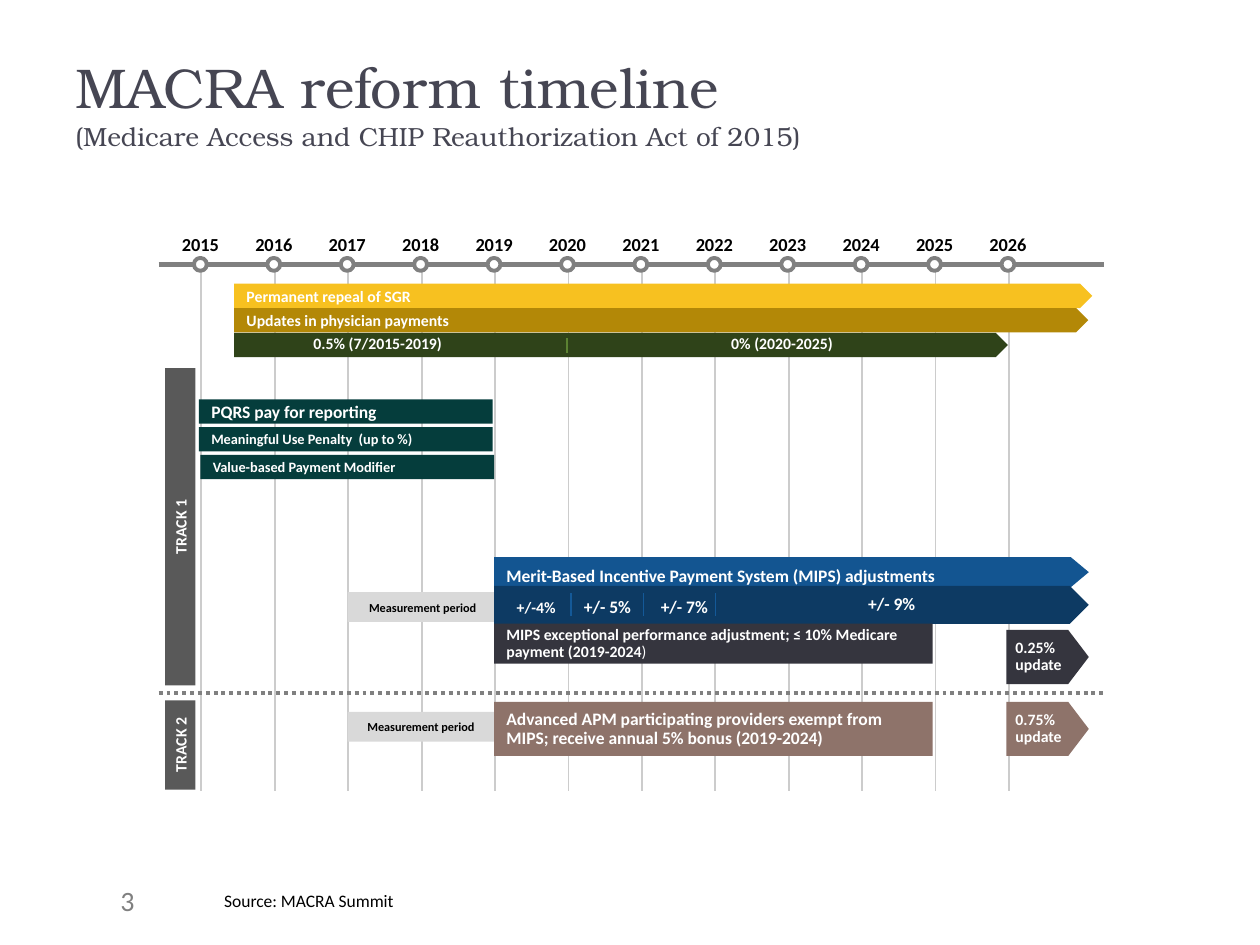
from pptx import Presentation
from pptx.dml.color import RGBColor
from pptx.enum.dml import MSO_LINE_DASH_STYLE as Dash
from pptx.enum.shapes import MSO_CONNECTOR as Connector, MSO_SHAPE as Shape
from pptx.enum.text import MSO_ANCHOR as Anchor, PP_ALIGN as Align
from pptx.oxml.ns import qn
from pptx.util import Cm, Pt
from lxml import etree

WHITE, BLACK, GRAY = "FFFFFF", "000000", "808080"
TEAL, BROWN, DARK = "053D3C", "8E736A", "35353E"
FIRST_X, YEAR_STEP = 4.04, 1.48
AXIS_Y, LEFT, RIGHT = 5.33, 3.2, 22.25
MIPS_X = 9.96


def color(value):
    return RGBColor.from_string(value)


def set_font(font, size, hue, bold, name="Calibri"):
    font.name, font.size, font.bold = name, Pt(size), bold
    font.color.rgb = color(hue)


def write(box, text, size, hue=WHITE, bold=True, align=Align.LEFT,
          anchor=Anchor.MIDDLE, wrap=True, insets=None, spacing=None, before=None):
    frame = box.text_frame
    frame.word_wrap, frame.vertical_anchor = wrap, anchor
    if insets:
        (frame.margin_left, frame.margin_top,
         frame.margin_right, frame.margin_bottom) = map(Cm, insets)
    para = frame.paragraphs[0]
    para.alignment, para.line_spacing = align, spacing
    if before:
        para.space_before = Pt(before)
    para.add_run().text = text
    set_font(para.font, size, hue, bold)
    return para


def add_label(page, area, text, size, **style):
    box = page.shapes.add_textbox(*map(Cm, area))
    return write(box, text, size, **style)


def add_block(page, kind, area, fill, point=None):
    block = page.shapes.add_shape(kind, *map(Cm, area))
    block.shadow.inherit = False
    block.fill.solid()
    block.fill.fore_color.rgb = color(fill)
    block.line.fill.background()
    if point is not None:
        block.adjustments[0] = point
    return block


def add_bar(page, area, fill, text, size, point=None, **style):
    bar = add_block(page, Shape.PENTAGON, area, fill, point)
    return write(bar, text, size, **style)


def add_line(page, start, end, hue, width, dash=None):
    line = page.shapes.add_connector(Connector.STRAIGHT, *map(Cm, start + end))
    line.line.color.rgb, line.line.width = color(hue), Pt(width)
    if dash:
        line.line.dash_style = dash
    etree.SubElement(line._element.spPr, qn("a:effectLst"))


def add_title(page):
    para = add_label(page, (1.27, 0.64, 22.86, 2.54), "MACRA reform timeline", 32,
                     hue="464653", bold=False, anchor=Anchor.BOTTOM)
    para.font.name = "TeX Gyre Bonum"
    para.add_line_break()
    span = para.add_run()
    span.text = "(Medicare Access and CHIP Reauthorization Act of 2015)"
    span.font.size = Pt(15)


def add_timeline(page):
    centers = [FIRST_X + YEAR_STEP * i for i in range(12)]
    for x in centers:
        add_line(page, (x + 0.02, 5.36), (x + 0.02, 15.95), "CCCCCC", 1)
    add_line(page, (LEFT, AXIS_Y), (RIGHT, AXIS_Y), GRAY, 3)
    for year, x in enumerate(centers, 2015):
        add_label(page, (x - 0.66, 4.57, 1.32, 0.71), str(year), 10.5, hue=BLACK,
                  align=Align.CENTER, anchor=Anchor.TOP, wrap=False)
        dot = add_block(page, Shape.OVAL, (x - 0.13, AXIS_Y - 0.13, 0.26, 0.26), WHITE)
        dot.line.color.rgb, dot.line.width = color(GRAY), Pt(2.25)


def add_payment_updates(page):
    add_bar(page, (4.72, 5.72, 17.3, 0.49), "F7C120", "Permanent repeal of SGR", 9)
    add_bar(page, (4.72, 6.21, 17.22, 0.49), "B38807", "Updates in physician payments", 9)
    add_block(page, Shape.PENTAGON, (4.72, 6.71, 15.6, 0.49), "2F4319")
    add_line(page, (11.43, 7.11), (11.43, 6.81), "5C8232", 0.75)
    for x, width, text in ((5.66, 3.91, "0.5% (7/2015-2019)"),
                           (14.15, 3.23, "0% (2020-2025)")):
        add_label(page, (x, 6.6, width, 0.64), text, 9, align=Align.CENTER)


def add_tracks(page):
    for top, height, text in ((7.42, 6.4, "TRACK 1"), (14.12, 1.8, "TRACK 2")):
        block = add_block(page, Shape.RECTANGLE, (3.33, top, 0.61, height), "595959")
        write(block, text, 9, align=Align.CENTER)
        block.text_frame._txBody.bodyPr.set("vert", "vert270")
    add_line(page, (LEFT, 13.97), (RIGHT, 13.97), GRAY, 2.25, Dash.ROUND_DOT)
    # Measurement periods
    for top, width, insets in ((11.94, 3.02, (0, 0.13, 0, 0.13)), (14.35, 2.95, None)):
        block = add_block(page, Shape.RECTANGLE, (7.01, top, width, 0.6), "D9D9D9")
        write(block, "Measurement period", 7, hue=BLACK, align=Align.CENTER, insets=insets)


def add_programs(page):
    # Programs that end in 2019
    for x, top, text, size in ((4.01, 8.05, "PQRS pay for reporting", 10),
                               (4.01, 8.61, "Meaningful Use Penalty  (up to %)", 8.2),
                               (4.04, 9.17, "Value-based Payment Modifier", 8.2)):
        add_bar(page, (x, top, 5.92, 0.49), TEAL, text, size, point=0)

    # MIPS adjustments and their yearly rates
    add_bar(page, (MIPS_X, 11.23, 11.99, 0.61), "135591",
            "Merit-Based Incentive Payment System (MIPS) adjustments", 10,
            point=0.6, insets=(0.25, 0.13, 0.25, 0))
    add_block(page, Shape.PENTAGON, (MIPS_X, 11.81, 11.99, 0.77), "0D3A63")
    for x, top, width, text, size in ((9.86, 11.91, 1.9, "+/-4%", 9),
                                      (11.33, 11.89, 1.83, "+/- 5%", 10),
                                      (12.78, 11.89, 2.03, "+/- 7%", 10),
                                      (14.61, 11.84, 6.73, "+/- 9%", 10)):
        add_label(page, (x, top, width, 0.67), text, size, align=Align.CENTER)
    for i in range(3):
        x = 11.51 + 1.46 * i
        add_line(page, (x, 12.42), (x, 11.96), "145998", 0.75)

    # Bonuses
    para = add_bar(page, (MIPS_X, 12.57, 8.84, 0.81), DARK,
                   "MIPS exceptional performance adjustment; "
                   "≤ 10% Medicare payment (2019-2024", 9, point=0, spacing=0.9)
    span = para.add_run()
    span.text, span.font.bold = ")", False
    add_bar(page, (MIPS_X, 14.15, 8.84, 1.09), BROWN,
            "Advanced APM participating providers exempt from MIPS; "
            "receive annual 5% bonus (2019-2024)", 10, point=0, spacing=0.9, before=4.5)

    # Updates from 2026
    for top, fill, text in ((14.15, BROWN, "0.75% update"), (12.7, DARK, "0.25% update")):
        add_bar(page, (20.29, top, 1.66, 1.09), fill, text, 9, point=0.38,
                insets=(0.18, 0.13, 0.1, 0.13), spacing=0.9, before=4.5)


def main():
    deck = Presentation()
    deck.slide_width, deck.slide_height = Cm(25.4), Cm(19.05)
    page = deck.slides.add_slide(deck.slide_layouts[6])
    add_title(page)
    add_timeline(page)
    add_payment_updates(page)
    add_tracks(page)
    add_programs(page)
    # Footer
    footer = {"bold": False, "anchor": Anchor.TOP}
    add_label(page, (2.18, 17.68, 1.19, 0.94), "3", 16, hue=GRAY, wrap=False, **footer)
    add_label(page, (4.27, 17.81, 18.31, 0.69), "Source: MACRA Summit", 10,
              hue=BLACK, **footer)
    deck.save("out.pptx")


if __name__ == "__main__":
    main()
